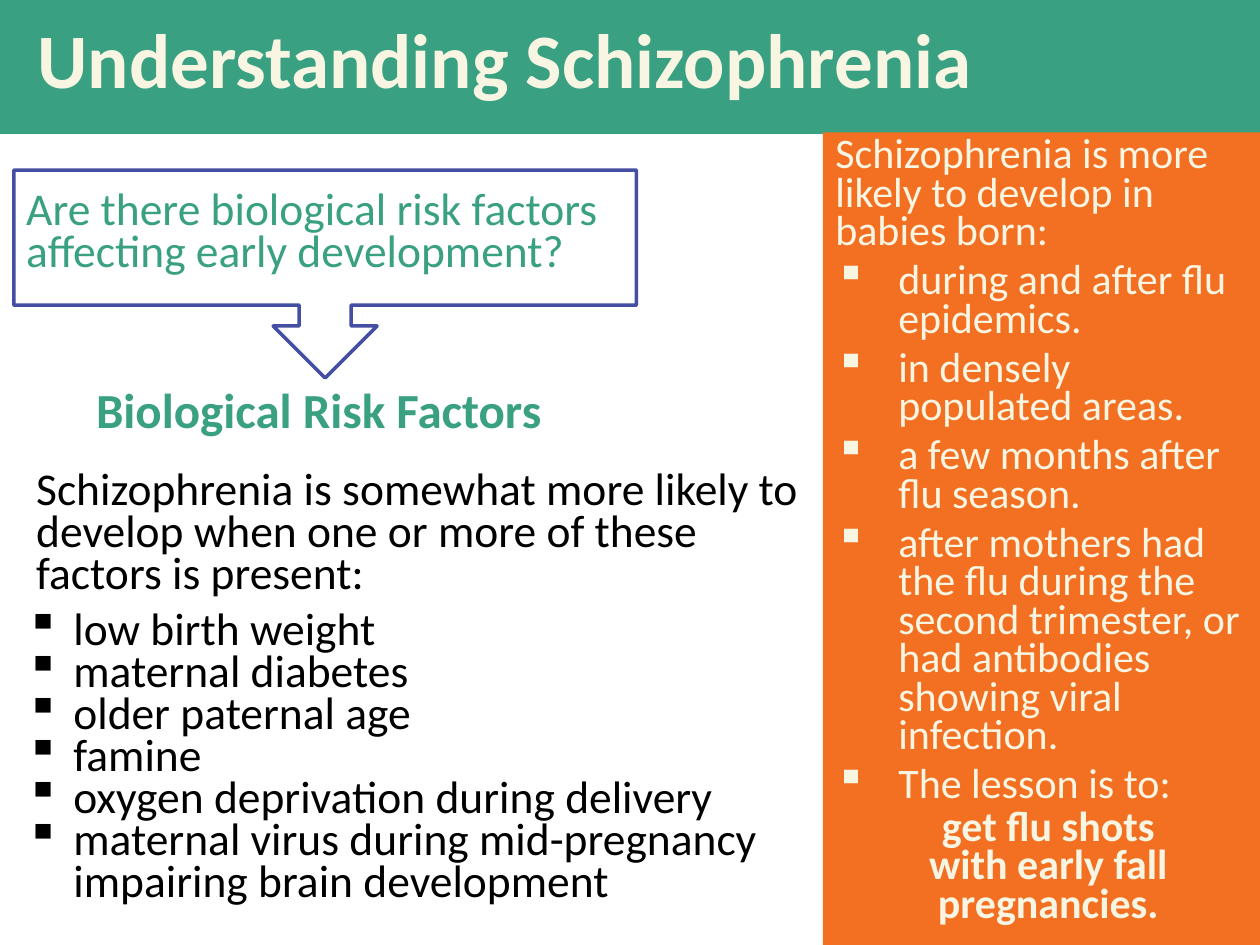
from dataclasses import dataclass

from lxml.etree import SubElement
from pptx import Presentation
from pptx.dml.color import RGBColor as Rgb
from pptx.enum.shapes import MSO_SHAPE as Shape
from pptx.enum.text import MSO_ANCHOR as Anchor, MSO_AUTO_SIZE as Fit, PP_ALIGN as Align
from pptx.oxml.ns import qn
from pptx.util import Cm, Pt


@dataclass(frozen=True)
class Theme:
    face: str = "Calibri"
    green: str = "3AA082"
    orange: str = "F36F21"
    cream: str = "F8F6E3"
    blue: str = "444EA2"
    black: str = "000000"
    title: int = 44
    head: int = 28
    body: int = 26
    side: int = 24


theme = Theme()


def write(shape, lines, size, color, lead, after=0, bold=False, align=Align.LEFT, indent=0, plain=0):
    """Fill a shape with paragraphs; those past the first `plain` get bullets if indent is set."""
    frame = shape.text_frame
    frame.word_wrap = True
    frame.auto_size = Fit.NONE
    frame.vertical_anchor = Anchor.TOP
    frame.text = "\n".join(lines)
    for i, para in enumerate(frame.paragraphs):
        para.alignment = align
        para.line_spacing = Pt(lead)
        para.space_before = Pt(0)
        para.space_after = Pt(after)
        if indent and i >= plain:
            props = para._p.get_or_add_pPr()
            props.set("marL", str(Cm(indent)))
            props.set("indent", str(-Cm(indent)))
            tint = SubElement(props, qn("a:buClr"))
            SubElement(tint, qn("a:srgbClr"), val=color)
            SubElement(props, qn("a:buChar"), char="▪")
        font = para.font
        font.name = theme.face
        font.size = Pt(size)
        font.bold = bold
        font.color.rgb = Rgb.from_string(color)


def place(left, top, width, height, kind=None):
    """Add a text box, or a preset shape without shadow when a kind is given."""
    box = [Cm(n) for n in (left, top, width, height)]
    if kind is None:
        return slide.shapes.add_textbox(*box)
    shape = slide.shapes.add_shape(kind, *box)
    shape.shadow.inherit = False
    return shape


deck = Presentation()
deck.slide_width, deck.slide_height = Cm(25.4), Cm(19.05)
slide = deck.slides.add_slide(deck.slide_layouts[5])

# Title band
title = slide.shapes.title
title.left, title.top, title.width, title.height = Cm(0), Cm(0), Cm(25.4), Cm(2.7)
title.fill.solid()
title.fill.fore_color.rgb = Rgb.from_string(theme.green)
write(title, ["Understanding Schizophrenia"], theme.title, theme.cream, 42, bold=True)
title.text_frame.vertical_anchor = Anchor.MIDDLE
title.text_frame.margin_left = Cm(0.76)

# Question in its callout
ask = place(0.28, 3.76, 12.55, 2.97)
write(ask, ["Are there biological risk factors affecting early development?"],
      theme.body, theme.green, 24, after=12)
call = place(0.28, 3.43, 12.55, 4.19, Shape.DOWN_ARROW_CALLOUT)
call.fill.background()
call.line.color.rgb = Rgb.from_string(theme.blue)
call.line.width = Pt(2)

# Risk factors
head = place(0, 7.87, 12.85, 1.12)
write(head, ["Biological Risk Factors"], theme.head, theme.green, 24, after=6,
      bold=True, align=Align.CENTER)
intro = place(0.48, 9.4, 16.13, 2.82)
write(intro, ["Schizophrenia is somewhat more likely to develop when one or more "
              "of these factors is present:"], theme.body, theme.black, 24, after=6)
risks = place(0.28, 12.22, 17.3, 6.58)
write(risks, [
    "low birth weight",
    "maternal diabetes",
    "older paternal age",
    "famine",
    "oxygen deprivation during delivery",
    "maternal virus during mid-pregnancy impairing brain development",
], theme.body, theme.black, 24, indent=0.95)

# Side panel
panel = place(16.59, 2.67, 8.81, 16.38, Shape.RECTANGLE)
panel.fill.solid()
panel.fill.fore_color.rgb = Rgb.from_string(theme.orange)
panel.line.fill.background()
write(panel, [
    "Schizophrenia is more likely to develop in babies born:",
    "during and after flu epidemics.",
    "in densely populated areas.",
    "a few months after flu season.",
    "after mothers had the flu during the second trimester, or had antibodies "
    "showing viral infection.",
    "The lesson is to:",
], theme.side, theme.cream, 22, after=6, indent=1.27, plain=1)
lesson = place(18.11, 16.23, 6.05, 2.62)
write(lesson, ["get flu shots with early fall pregnancies."], theme.side, theme.cream, 22,
      bold=True, align=Align.CENTER)

deck.save("out.pptx")
